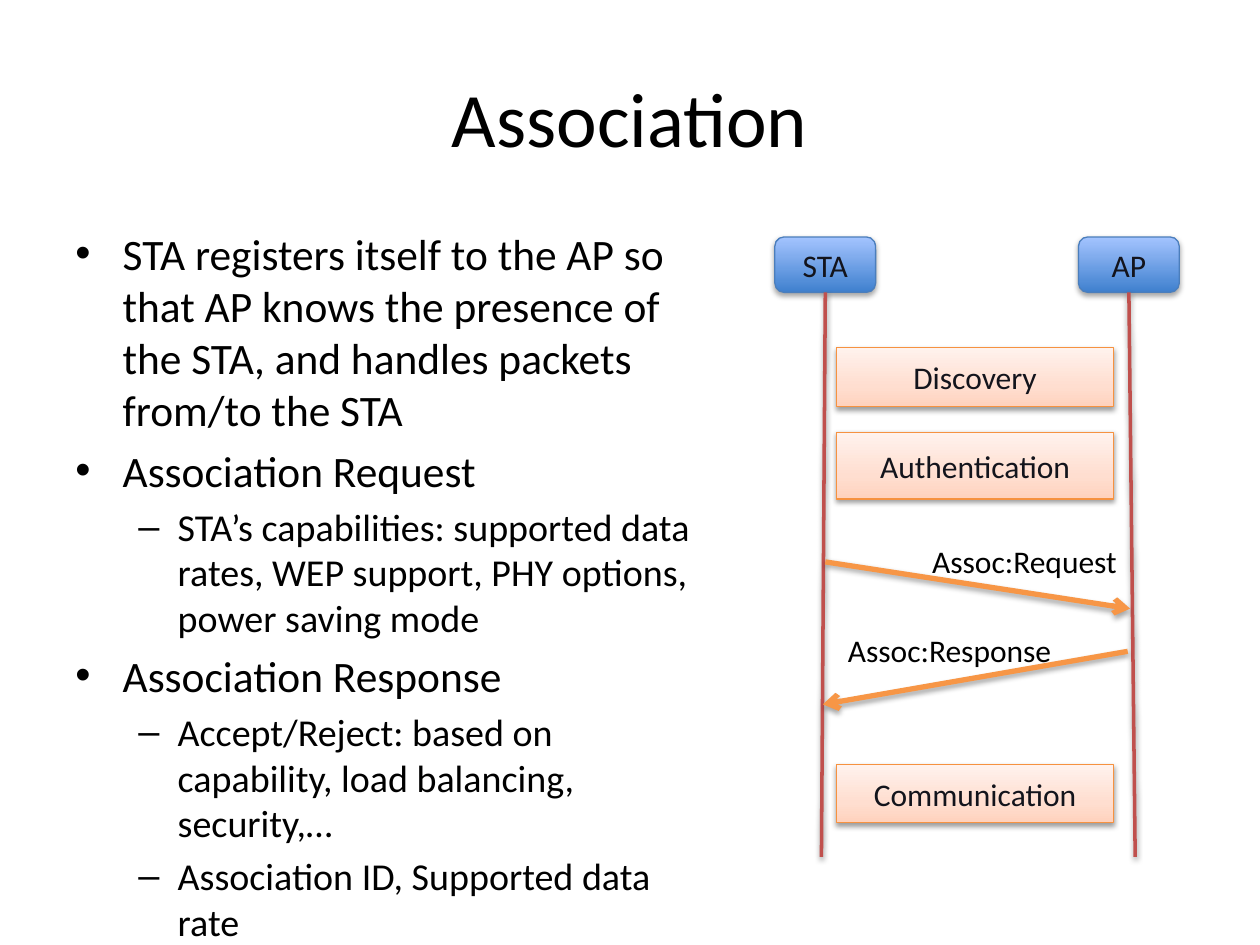
from lxml import etree
from pptx import Presentation
from pptx.dml.color import RGBColor
from pptx.enum.shapes import MSO_CONNECTOR, MSO_SHAPE
from pptx.enum.text import MSO_ANCHOR, PP_ALIGN
from pptx.oxml.ns import qn
from pptx.util import Pt

STRAIGHT = MSO_CONNECTOR.STRAIGHT
ROUNDED = MSO_SHAPE.ROUNDED_RECTANGLE
RECTANGLE = MSO_SHAPE.RECTANGLE
MIDDLE = MSO_ANCHOR.MIDDLE
CENTER = PP_ALIGN.CENTER
BOTTOM_SIDE = 2


def add_span(para, text, size, color="000000"):
    span = para.add_run()
    span.text = text
    span.font.name = "Calibri"
    span.font.size = Pt(size)
    span.font.color.rgb = RGBColor.from_string(color)


def add_shadow(item, alpha, distance):
    effects = etree.SubElement(item._element.spPr, qn("a:effectLst"))
    shadow = etree.SubElement(
        effects, qn("a:outerShdw"), blurRad=str(Pt(3.1)), dist=str(Pt(distance)),
        dir="5400000", rotWithShape="0")
    black = etree.SubElement(shadow, qn("a:srgbClr"), val="000000")
    etree.SubElement(black, qn("a:alpha"), val=str(alpha * 1000))


deck = Presentation()
deck.slide_width, deck.slide_height = Pt(720), Pt(540)
page = deck.slides.add_slide(deck.slide_layouts[6])

title = page.shapes.add_textbox(Pt(36), Pt(21.6), Pt(648), Pt(90)).text_frame
title.word_wrap = True
title.vertical_anchor = MIDDLE
title.paragraphs[0].alignment = CENTER
add_span(title.paragraphs[0], "Association", 44)

bullets = [
    (0, "STA registers itself to the AP so that AP knows the presence of the STA, "
        "and handles packets from/to the STA"),
    (0, "Association Request"),
    (1, "STA’s capabilities: supported data rates, WEP support, PHY options, "
        "power saving mode"),
    (0, "Association Response"),
    (1, "Accept/Reject: based on capability, load balancing, security,…"),
    (1, "Association ID, Supported data rate"),
]
bullet_styles = [("•", 24.8, 27, 27), ("–", 21.7, 58.5, 22.5)]
body = page.shapes.add_textbox(Pt(36), Pt(126), Pt(368), Pt(363.6)).text_frame
body.word_wrap = True
for index, (level, text) in enumerate(bullets):
    mark, size, margin, hanging = bullet_styles[level]
    para = body.add_paragraph() if index else body.paragraphs[0]
    para.level = level
    para.space_before = Pt(size * 0.2)
    properties = para._p.get_or_add_pPr()
    properties.set("marL", str(Pt(margin)))
    properties.set("indent", str(-Pt(hanging)))
    etree.SubElement(properties, qn("a:buFont"), typeface="Arial")
    etree.SubElement(properties, qn("a:buChar"), char=mark)
    add_span(para, text, size)

blue = ([(0, "3F80CE"), (100, "A4C4FF")], "4B7EBC", 35, 1.8)
peach = ([(0, "FFD2BD"), (35, "FFDED0"), (100, "FFF2ED")], "F69240", 38, 1.6)
boxes = [
    ("STA", ROUNDED, 442.8, 135.4, 57.6, 31.7, blue),
    ("AP", ROUNDED, 616.3, 135.4, 57.6, 31.7, blue),
    ("Authentication", RECTANGLE, 478, 247, 158.4, 38.2, peach),
    ("Discovery", RECTANGLE, 478, 198.7, 158.4, 33.8, peach),
    ("Communication", RECTANGLE, 478, 437, 158.4, 33.1, peach),
]
drawn = {}
for name, kind, left, top, width, height, style in boxes:
    stops, outline, alpha, distance = style
    box = page.shapes.add_shape(kind, Pt(left), Pt(top), Pt(width), Pt(height))
    box.fill.gradient()
    box.fill.gradient_angle = 90
    stop_list = box._element.spPr.find(qn("a:gradFill")).find(qn("a:gsLst"))
    stop_list.clear()
    for position, color in stops:
        stop = etree.SubElement(stop_list, qn("a:gs"), pos=str(position * 1000))
        etree.SubElement(stop, qn("a:srgbClr"), val=color)
    box.line.color.rgb = RGBColor.from_string(outline)
    box.line.width = Pt(0.75)
    add_shadow(box, alpha, distance)
    box.text_frame.vertical_anchor = MIDDLE
    box.text_frame.word_wrap = True
    box.text_frame.paragraphs[0].alignment = CENTER
    add_span(box.text_frame.paragraphs[0], name, 18, "13141C")
    drawn[name] = box

lines = [
    ("STA", 471.6, 167.1, 469.4, 489.6),
    ("AP", 645.1, 167.1, 648.7, 489.6),
    (None, 471.6, 321.1, 645.8, 347.8),
    (None, 644.4, 372.2, 470.2, 402.5),
]
for owner, *ends in lines:
    line = page.shapes.add_connector(STRAIGHT, *[Pt(end) for end in ends])
    line.line.color.rgb = RGBColor.from_string("C0504D" if owner else "F79646")
    line.line.width = Pt(2 if owner else 3)
    if owner:
        line.begin_connect(drawn[owner], BOTTOM_SIDE)
        add_shadow(line, 38, 1.6)
    else:
        etree.SubElement(line.line._get_or_add_ln(), qn("a:tailEnd"), type="arrow")
        add_shadow(line, 35, 1.8)

labels = [("Assoc:Request", 525.6, 306, 124.6), ("Assoc:Response", 477.4, 357.1, 135.4)]
for text, left, top, width in labels:
    label = page.shapes.add_textbox(Pt(left), Pt(top), Pt(width), Pt(28.8)).text_frame
    label.word_wrap = False
    add_span(label.paragraphs[0], text, 18)

deck.save("out.pptx")
